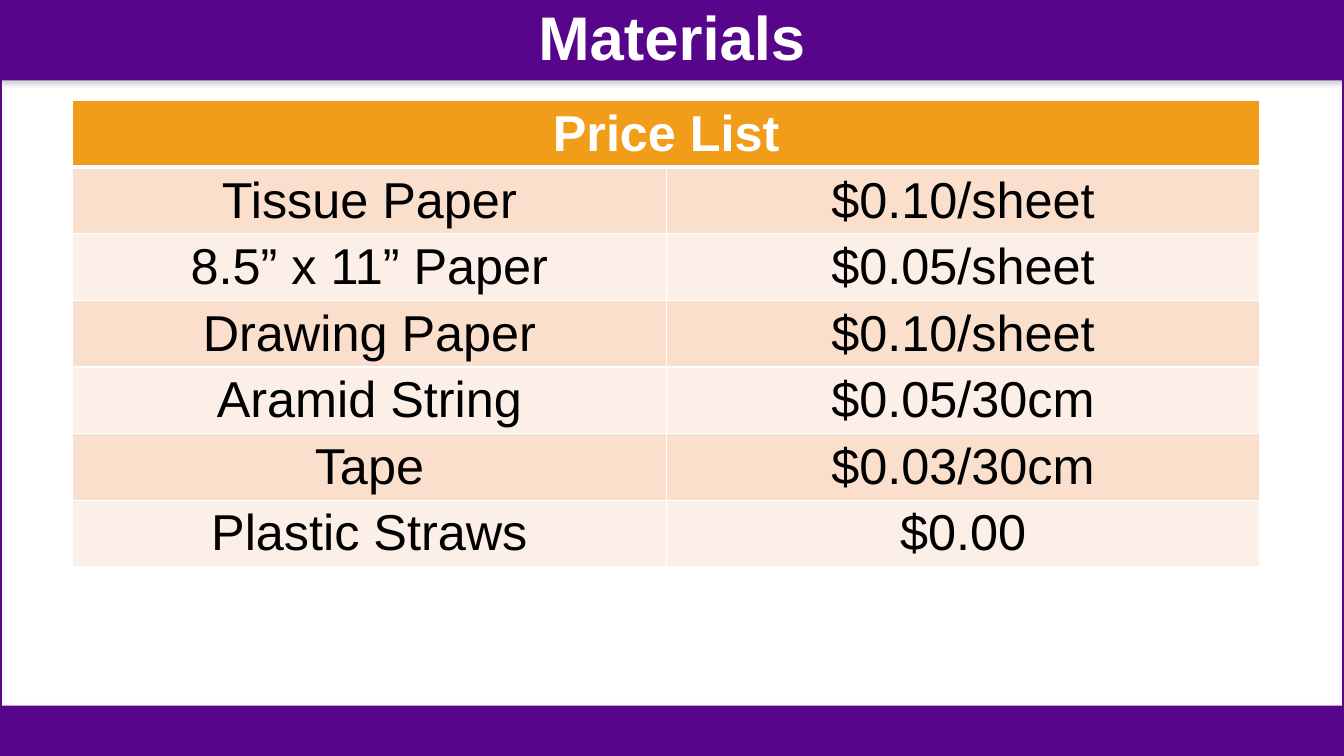
from lxml.etree import SubElement
from pptx import Presentation
from pptx.dml.color import RGBColor
from pptx.enum.shapes import MSO_SHAPE
from pptx.enum.text import MSO_ANCHOR, PP_ALIGN
from pptx.oxml.ns import qn
from pptx.util import Cm, Pt

COLORS = {
    "purple": "57068C",
    "orange": "F19D19",
    "peach": "FADFCC",
    "cream": "FCEFE8",
    "white": "FFFFFF",
    "black": "000000",
    "shadow": "808080",
}
SLIDE_WIDTH, SLIDE_HEIGHT = Cm(33.87), Cm(19.05)
HEADER_HEIGHT, FOOTER_HEIGHT = Cm(2.03), Cm(1.27)
PRICES = [
    ("Tissue Paper", "$0.10/sheet"),
    ("8.5” x 11” Paper", "$0.05/sheet"),
    ("Drawing Paper", "$0.10/sheet"),
    ("Aramid String", "$0.05/30cm"),
    ("Tape", "$0.03/30cm"),
    ("Plastic Straws", "$0.00"),
]


def rgb(name):
    """Return the named colour."""
    return RGBColor.from_string(COLORS[name])


def write_text(text_frame, text, size, color, bold):
    """Write one centred paragraph."""
    text_frame.text = text
    paragraph = text_frame.paragraphs[0]
    paragraph.alignment = PP_ALIGN.CENTER
    font_format = {"name": "Arial", "size": Pt(size), "bold": bold}
    for attribute, value in font_format.items():
        setattr(paragraph.runs[0].font, attribute, value)
    paragraph.runs[0].font.color.rgb = rgb(color)
    return paragraph


def add_color(parent, name):
    """Add a solid colour element and return it."""
    return SubElement(parent, qn("a:srgbClr"), val=COLORS[name])


def add_bar(slide, left, top, width, height):
    """Add a purple bar with a soft shadow below it."""
    bar = slide.shapes.add_shape(MSO_SHAPE.RECTANGLE, left, top, width, height)
    bar.fill.solid()
    bar.fill.fore_color.rgb = rgb("purple")
    bar.line.fill.background()
    bar.shadow.inherit = False
    effects = bar.element.spPr.find(qn("a:effectLst"))
    shadow = SubElement(
        effects, qn("a:outerShdw"), blurRad=str(Pt(3.1)), dist=str(Pt(1.8)),
        dir="5400000", rotWithShape="0",
    )
    SubElement(add_color(shadow, "shadow"), qn("a:alpha"), val="35000")
    return bar


def add_frame(slide, left, top, width, height):
    """Outline the slide in purple."""
    frame = slide.shapes.add_shape(MSO_SHAPE.RECTANGLE, left, top, width, height)
    frame.fill.background()
    frame.line.color.rgb = rgb("purple")
    frame.line.width = Pt(2.25)
    frame.shadow.inherit = False


def place_title(slide, bar, text):
    """Fit the title placeholder to the header bar, in front of it."""
    title = slide.shapes.title
    for attribute in ("left", "top", "width", "height"):
        setattr(title, attribute, getattr(bar, attribute))
    paragraph = write_text(title.text_frame, text, 44, "white", True)
    paragraph.line_spacing = 0.9
    title.text_frame.vertical_anchor = MSO_ANCHOR.MIDDLE
    bar.element.addnext(title.element)


def format_cell(cell, fill, top_width, bottom_width):
    """Give a cell white borders and a solid fill."""
    properties = cell._tc.get_or_add_tcPr()
    widths = {"lnL": 1, "lnR": 1, "lnT": top_width, "lnB": bottom_width}
    for side, width in widths.items():
        border = SubElement(properties, qn(f"a:{side}"), w=str(Pt(width)))
        add_color(SubElement(border, qn("a:solidFill")), "white")
    cell.fill.solid()
    cell.fill.fore_color.rgb = rgb(fill)


def add_price_table(slide, left, top, width, height):
    """Add the price list under a merged heading."""
    table = slide.shapes.add_table(
        len(PRICES) + 1, 2, left, top, width, height
    ).table
    table.first_row = table.horz_banding = False
    table.cell(0, 0).merge(table.cell(0, 1))
    write_text(table.cell(0, 0).text_frame, "Price List", 36, "white", True)
    for column in range(2):
        format_cell(table.cell(0, column), "orange", 1, 3)
    for row, entry in enumerate(PRICES, start=1):
        fill = "peach" if row % 2 else "cream"
        for column, text in enumerate(entry):
            cell = table.cell(row, column)
            write_text(cell.text_frame, text, 36, "black", False)
            format_cell(cell, fill, 3 if row == 1 else 1, 1)


def build_materials_slide(presentation):
    """Build the materials price slide."""
    slide = presentation.slides.add_slide(presentation.slide_layouts[5])
    header = add_bar(slide, 0, 0, SLIDE_WIDTH, HEADER_HEIGHT)
    add_frame(slide, 0, 0, SLIDE_WIDTH, SLIDE_HEIGHT)
    add_bar(slide, 0, SLIDE_HEIGHT - FOOTER_HEIGHT, SLIDE_WIDTH, FOOTER_HEIGHT)
    place_title(slide, header, "Materials")
    add_price_table(slide, Cm(1.83), Cm(2.54), Cm(29.92), Cm(11.7))


def main():
    """Create and save the presentation."""
    presentation = Presentation()
    presentation.slide_width = SLIDE_WIDTH
    presentation.slide_height = SLIDE_HEIGHT
    build_materials_slide(presentation)
    presentation.save("out.pptx")


if __name__ == "__main__":
    main()
